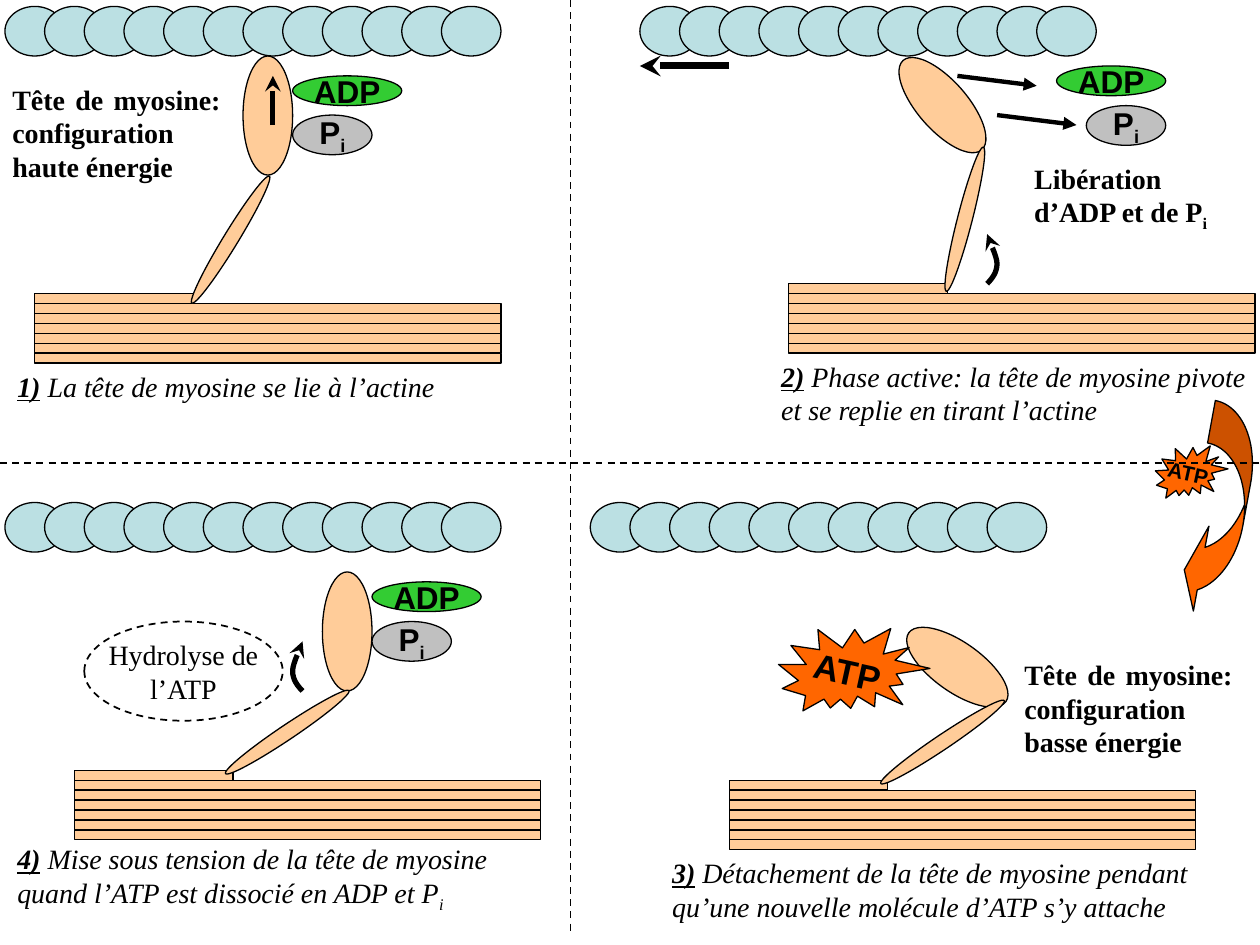
import dataclasses

import lxml.etree
import pptx
import pptx.dml.color
import pptx.enum.dml
import pptx.enum.shapes
import pptx.enum.text
import pptx.oxml.ns
import pptx.util

Cm = pptx.util.Cm
Pt = pptx.util.Pt
SHAPE = pptx.enum.shapes.MSO_SHAPE
ALIGN = pptx.enum.text.PP_ALIGN
DASH = pptx.enum.dml.MSO_LINE.DASH


def rgb(value):
    return pptx.dml.color.RGBColor.from_string(value)


@dataclasses.dataclass(frozen=True)
class Theme:
    ink: str = "000000"
    actin: str = "BBE0E3"
    myosin: str = "FFCC99"
    adp: str = "33CC33"
    phosphate: str = "C0C0C0"
    atp: str = "FF6600"
    label_font: str = "Arial"
    text_font: str = "Times New Roman"
    text_size: int = 16
    label_size: int = 18
    atp_size: int = 20
    small_atp_size: int = 12
    outline: float = 0.75
    dashed: float = 1


def write_text(frame, text, *, font, size, color, number="", subscript="",
               bold=False, italic=False, align=ALIGN.LEFT):
    lines = text.split("\n")
    for index, line in enumerate(lines):
        paragraph = frame.paragraphs[0] if index == 0 else frame.add_paragraph()
        paragraph.alignment = align
        pieces = [(line, None)]
        if number and index == 0:
            pieces.insert(0, (number, "number"))
        if subscript and index == len(lines) - 1:
            pieces.append((subscript, "subscript"))
        for content, role in pieces:
            run = paragraph.add_run()
            run.text = content
            run.font.name = font
            run.font.size = Pt(size)
            run.font.color.rgb = rgb(color)
            run.font.bold = bold or role == "number"
            run.font.italic = italic
            run.font.underline = role == "number"
            if role == "subscript":
                run._r.get_or_add_rPr().set("baseline", "-25000")


class Diagram:
    def __init__(self, slide, theme):
        self.slide = slide
        self.theme = theme

    def stroke(self, line, width, dash=None, head=None):
        line.color.rgb = rgb(self.theme.ink)
        line.width = Pt(width)
        if dash:
            line.dash_style = dash
        if head:
            lxml.etree.SubElement(line._get_or_add_ln(), pptx.oxml.ns.qn("a:tailEnd"), type=head)

    def shape(self, kind, left, top, width, height, fill=None, rotation=0, dash=None):
        shape = self.slide.shapes.add_shape(kind, Cm(left), Cm(top), Cm(width), Cm(height))
        shape.shadow.inherit = False
        shape.rotation = rotation
        if fill:
            shape.fill.solid()
            shape.fill.fore_color.rgb = rgb(fill)
        else:
            shape.fill.background()
        self.stroke(shape.line, self.theme.dashed if dash else self.theme.outline, dash)
        return shape

    def label(self, shape, text, size, font=None, bold=True, subscript=""):
        frame = shape.text_frame
        frame.word_wrap = False
        frame.vertical_anchor = pptx.enum.text.MSO_ANCHOR.MIDDLE
        write_text(frame, text, font=font or self.theme.label_font, size=size,
                   color=self.theme.ink, bold=bold, subscript=subscript, align=ALIGN.CENTER)

    def text(self, left, top, width, height, text, **style):
        box = self.slide.shapes.add_textbox(Cm(left), Cm(top), Cm(width), Cm(height))
        box.text_frame.word_wrap = True
        write_text(box.text_frame, text, font=self.theme.text_font,
                   size=self.theme.text_size, color=self.theme.ink, **style)

    def line(self, start, end, width, head=None, dash=None):
        connector = self.slide.shapes.add_connector(
            pptx.enum.shapes.MSO_CONNECTOR.STRAIGHT, *map(Cm, start + end))
        lxml.etree.SubElement(connector._element.spPr, pptx.oxml.ns.qn("a:effectLst"))
        self.stroke(connector.line, width, dash, head)

    def curved_arrow(self, x, y, side):
        curves = [((0, 0), (0.1, 0.1), (0.2, 0.23), (0.2, 0.4)),
                  ((0.2, 0.57), (0.2, 0.57), (0.03, 0.87), (0, 1))]
        curves[1] = (curves[0][3],) + curves[1][1:]
        points = []
        for a, b, c, d in curves:
            for step in range(1, 9):
                t = step / 8
                weights = ((1 - t) ** 3, 3 * t * (1 - t) ** 2, 3 * t * t * (1 - t), t ** 3)
                dx, dy = (sum(w * p[axis] for w, p in zip(weights, (a, b, c, d)))
                          for axis in (0, 1))
                points.append((Cm(x + side * dx), Cm(y - dy)))
        builder = self.slide.shapes.build_freeform(Cm(x), Cm(y))
        builder.add_line_segments(points, close=False)
        shape = builder.convert_to_shape()
        shape.shadow.inherit = False
        shape.fill.background()
        self.stroke(shape.line, 3, head="stealth")

    def actin(self, left, top, beads):
        for index in range(beads):
            self.shape(SHAPE.OVAL, left + 0.8 * index, top, 1.2, 1, self.theme.actin)

    def myosin(self, filament, head, head_angle, neck, neck_angle):
        left, top = filament
        self.shape(SHAPE.OVAL, *head, 1, 2.4, self.theme.myosin, head_angle)
        for row in range(1, 7):
            self.shape(SHAPE.RECTANGLE, left, top + 0.2 * row, 9.4, 0.2, self.theme.myosin)
        self.shape(SHAPE.RECTANGLE, left, top, 3.2, 0.2, self.theme.myosin)
        self.shape(SHAPE.OVAL, *neck, 0.3, 3, self.theme.myosin, neck_angle)

    def products(self, adp, phosphate):
        size = self.theme.label_size
        self.label(self.shape(SHAPE.OVAL, *adp, 2.2, 0.6, self.theme.adp), "ADP", size)
        self.label(self.shape(SHAPE.OVAL, *phosphate, 1.6, 0.8, self.theme.phosphate),
                   "P", size, subscript="i")

    def atp(self, left, top, width, height, size):
        burst = self.shape(SHAPE.EXPLOSION2, left, top, width, height, self.theme.atp, 12.4)
        self.label(burst, "ATP", size)


def main():
    presentation = pptx.Presentation()
    presentation.slide_width = Cm(25.4)
    presentation.slide_height = Cm(19.05)
    theme = Theme()
    diagram = Diagram(presentation.slides.add_slide(presentation.slide_layouts[6]), theme)

    cycle = diagram.shape(SHAPE.CURVED_LEFT_ARROW, 24.1, 8.13, 1, 4.34, theme.atp, 10.4)
    for index, value in enumerate((0.87, 1.74, 0.33)):
        cycle.adjustments[index] = value

    for left, top, beads in ((0.1, 0.13, 12), (12.9, 0.13, 11),
                             (11.9, 10.13, 11), (0.1, 10.13, 12)):
        diagram.actin(left, top, beads)

    diagram.myosin((0.7, 5.92), (4.9, 1.13), 0, (4.5, 3.33), 31.4)
    diagram.myosin((15.9, 5.72), (18.5, 0.92), 318.7, (19.3, 2.92), 14.4)
    diagram.myosin((14.7, 15.73), (18.8, 12.25), 305.3, (18.85, 13.46), 56.1)
    diagram.myosin((1.5, 15.53), (6.5, 11.53), 0, (5.64, 13.26), 56.1)

    diagram.products((5.9, 1.53), (5.9, 2.32))
    diagram.products((21.3, 1.33), (21.9, 2.13))
    diagram.products((7.5, 11.73), (7.5, 12.53))
    diagram.atp(15.7, 12.53, 3, 2, theme.atp_size)
    diagram.atp(23.3, 8.92, 1.42, 1.22, theme.small_atp_size)

    hydrolysis = diagram.shape(SHAPE.OVAL, 1.7, 12.53, 4, 2, dash=DASH)
    diagram.label(hydrolysis, "Hydrolyse de\nl’ATP", theme.text_size, theme.text_font, bold=False)

    diagram.line((19.3, 1.53), (20.9, 1.73), 2.5, "triangle")
    diagram.line((20.1, 2.32), (21.7, 2.52), 2.5, "triangle")
    diagram.line((14.7, 1.33), (12.9, 1.33), 4, "stealth")
    diagram.line((5.5, 2.52), (5.5, 1.53), 3, "stealth")
    diagram.curved_arrow(6.1, 13.93, -1)
    diagram.curved_arrow(19.9, 5.72, 1)

    captions = (
        (0.1, 7.32, 10.72, 0.94, "1)", " La tête de myosine se lie à l’actine", ""),
        (15.5, 7.12, 10, 1.62, "2)",
         " Phase active: la tête de myosine pivote et se replie en tirant l’actine", ""),
        (13.3, 17.13, 11.2, 1.62, "3)",
         " Détachement de la tête de myosine pendant qu’une nouvelle molécule d’ATP s’y attache", ""),
        (0.1, 16.85, 10.72, 1.62, "4)",
         " Mise sous tension de la tête de myosine quand l’ATP est dissocié en ADP et P", "i"),
    )
    for left, top, width, height, number, text, subscript in captions:
        diagram.text(left, top, width, height, text, number=number,
                     subscript=subscript, italic=True)

    remarks = (
        (0, 1.53, 2.29, "Tête de myosine: configuration haute énergie", ""),
        (20.6, 3.13, 1.62, "Libération d’ADP et de P", "i"),
        (20.4, 13.13, 2.29, "Tête de myosine: configuration basse énergie", ""),
    )
    for left, top, height, text, subscript in remarks:
        diagram.text(left, top, 4.7, height, text, subscript=subscript,
                     bold=True, align=ALIGN.JUSTIFY)

    diagram.line((0, 9.33), (25.4, 9.33), theme.dashed, dash=DASH)
    diagram.line((11.5, 0), (11.5, 18.85), theme.dashed, dash=DASH)

    presentation.save("out.pptx")


if __name__ == "__main__":
    main()
